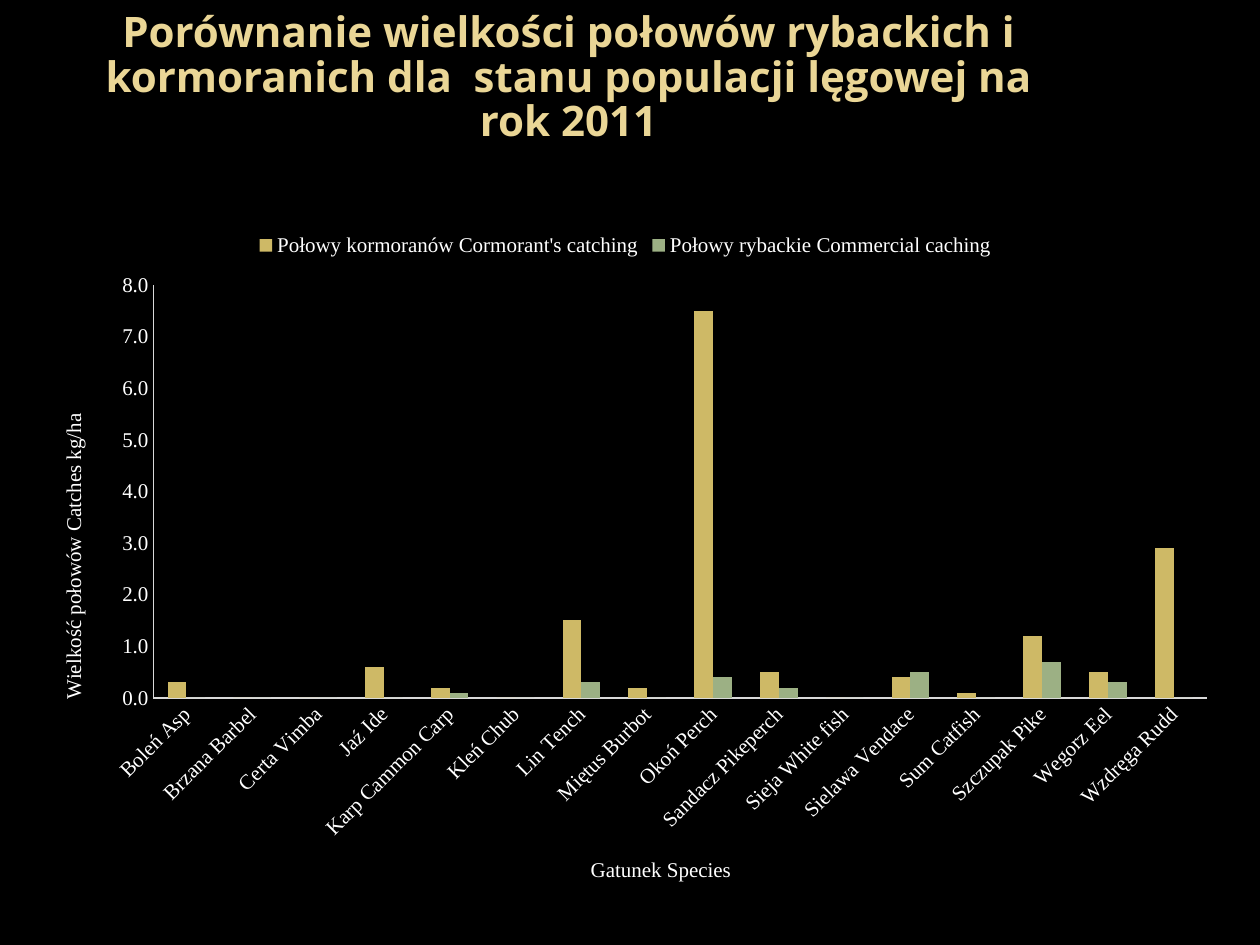
from dataclasses import dataclass

from lxml import etree
from pptx import Presentation
from pptx import util as u
from pptx.chart.data import CategoryChartData
from pptx.dml.color import RGBColor
from pptx.enum import chart as charts, text
from pptx.oxml import parse_xml
from pptx.oxml.ns import nsdecls, qn

PX = u.Inches(1) / 126


@dataclass(frozen=True)
class Theme:
    background: RGBColor = RGBColor.from_string("000000")
    title: RGBColor = RGBColor.from_string("EAD696")
    body: RGBColor = RGBColor.from_string("FFFFFF")
    axis: RGBColor = RGBColor.from_string("D9D9D9")
    cormorants: RGBColor = RGBColor.from_string("CEB966")
    fishery: RGBColor = RGBColor.from_string("9CB084")
    title_font: str = "Open Sans"
    chart_font: str = "Times New Roman"
    title_size: int = u.Pt(24)
    chart_size: int = u.Pt(12)


THEME = Theme()
TITLE = ("Porównanie wielkości połowów rybackich i kormoranich "
         "dla  stanu populacji lęgowej na rok 2011")
CATCHES = [  # species, cormorants, fishery (kg/ha)
    ("Boleń Asp", 0.3, 0), ("Brzana Barbel", 0, 0), ("Certa Vimba", 0, 0),
    ("Jaź Ide", 0.6, 0), ("Karp Cammon Carp", 0.2, 0.1), ("Kleń Chub", 0, 0),
    ("Lin Tench", 1.5, 0.3), ("Miętus Burbot", 0.2, 0), ("Okoń Perch", 7.5, 0.4),
    ("Sandacz Pikeperch", 0.5, 0.2), ("Sieja White fish", 0, 0),
    ("Sielawa Vendace", 0.4, 0.5), ("Sum Catfish", 0.1, 0),
    ("Szczupak Pike", 1.2, 0.7), ("Wegorz Eel", 0.5, 0.3), ("Wzdręga Rudd", 2.9, 0),
]


def px(*lengths):
    return [round(length * PX) for length in lengths]


def set_values(target, values):
    for name, value in values.items():
        setattr(target, name, value)


def style_font(font, color, **values):
    set_values(font, values)
    font.color.rgb = color


def chart_font(font):
    style_font(font, THEME.body, name=THEME.chart_font, size=THEME.chart_size, bold=False)


def add_title(slide, box):
    frame = slide.shapes.add_textbox(*px(*box)).text_frame
    set_values(frame, {"word_wrap": True, "vertical_anchor": text.MSO_ANCHOR.MIDDLE,
                       "margin_top": 0, "margin_bottom": 0})
    paragraph = frame.paragraphs[0]
    set_values(paragraph, {"text": TITLE, "alignment": text.PP_ALIGN.CENTER,
                           "line_spacing": 0.88})
    style_font(paragraph.runs[0].font, THEME.title, name=THEME.title_font,
               size=THEME.title_size, bold=True)


def style_axis(axis, title):
    set_values(axis, {"has_major_gridlines": False,
                      "major_tick_mark": charts.XL_TICK_MARK.NONE,
                      "minor_tick_mark": charts.XL_TICK_MARK.NONE})
    axis.format.line.color.rgb = THEME.axis
    axis.format.line.width = u.Pt(0.75)
    chart_font(axis.tick_labels.font)
    paragraph = axis.axis_title.text_frame.paragraphs[0]
    paragraph.text = title
    chart_font(paragraph.runs[0].font)


def place_plot(chart, **fractions):
    """Fix the inner plot area as fractions of the chart."""
    plot_area = chart.plots[0]._element.getparent()
    for old in plot_area.findall(qn("c:layout")):
        plot_area.remove(old)
    layout = parse_xml(f"<c:layout {nsdecls('c')}><c:manualLayout/></c:layout>")
    settings = {"layoutTarget": "inner", "xMode": "edge", "yMode": "edge", **fractions}
    for name, value in settings.items():
        etree.SubElement(layout[0], qn(f"c:{name}")).set("val", str(value))
    plot_area.insert(0, layout)


def add_catch_chart(slide, box):
    species, cormorants, fishery = zip(*CATCHES)
    data = CategoryChartData(number_format="0.0")
    data.categories = species
    data.add_series("Połowy kormoranów Cormorant's catching", cormorants)
    data.add_series("Połowy rybackie Commercial caching", fishery)
    chart = slide.shapes.add_chart(
        charts.XL_CHART_TYPE.COLUMN_CLUSTERED, *px(*box), data).chart
    chart_font(chart.font)
    set_values(chart, {"has_title": False, "has_legend": True})
    set_values(chart.legend, {"position": charts.XL_LEGEND_POSITION.TOP,
                              "include_in_layout": False})
    chart_font(chart.legend.font)

    plot = chart.plots[0]
    set_values(plot, {"gap_width": 150, "overlap": 0, "vary_by_categories": False})
    for series, color in zip(plot.series, (THEME.cormorants, THEME.fishery)):
        series.invert_if_negative = False
        series.format.fill.solid()
        series.format.fill.fore_color.rgb = color

    style_axis(chart.category_axis, "Gatunek Species")
    style_axis(chart.value_axis, "Wielkość połowów Catches kg/ha")
    set_values(chart.value_axis, {"minimum_scale": 0, "maximum_scale": 8, "major_unit": 1})
    set_values(chart.value_axis.tick_labels, {"number_format": "0.0",
                                              "number_format_is_linked": False})
    label_body = chart.category_axis._element.find(qn("c:txPr")).find(qn("a:bodyPr"))
    label_body.set("rot", str(-45 * 60000))
    place_plot(chart, x=0.107, y=0.096, w=0.877, h=0.608)


def main():
    presentation = Presentation()
    width, height = px(1260, 945)
    set_values(presentation, {"slide_width": width, "slide_height": height})
    slide = presentation.slides.add_slide(presentation.slide_layouts[6])
    slide.background.fill.solid()
    slide.background.fill.fore_color.rgb = THEME.background
    add_title(slide, (54, 0, 1029, 158))
    add_catch_chart(slide, (25, 220, 1201, 679))
    presentation.save("out.pptx")


if __name__ == "__main__":
    main()
